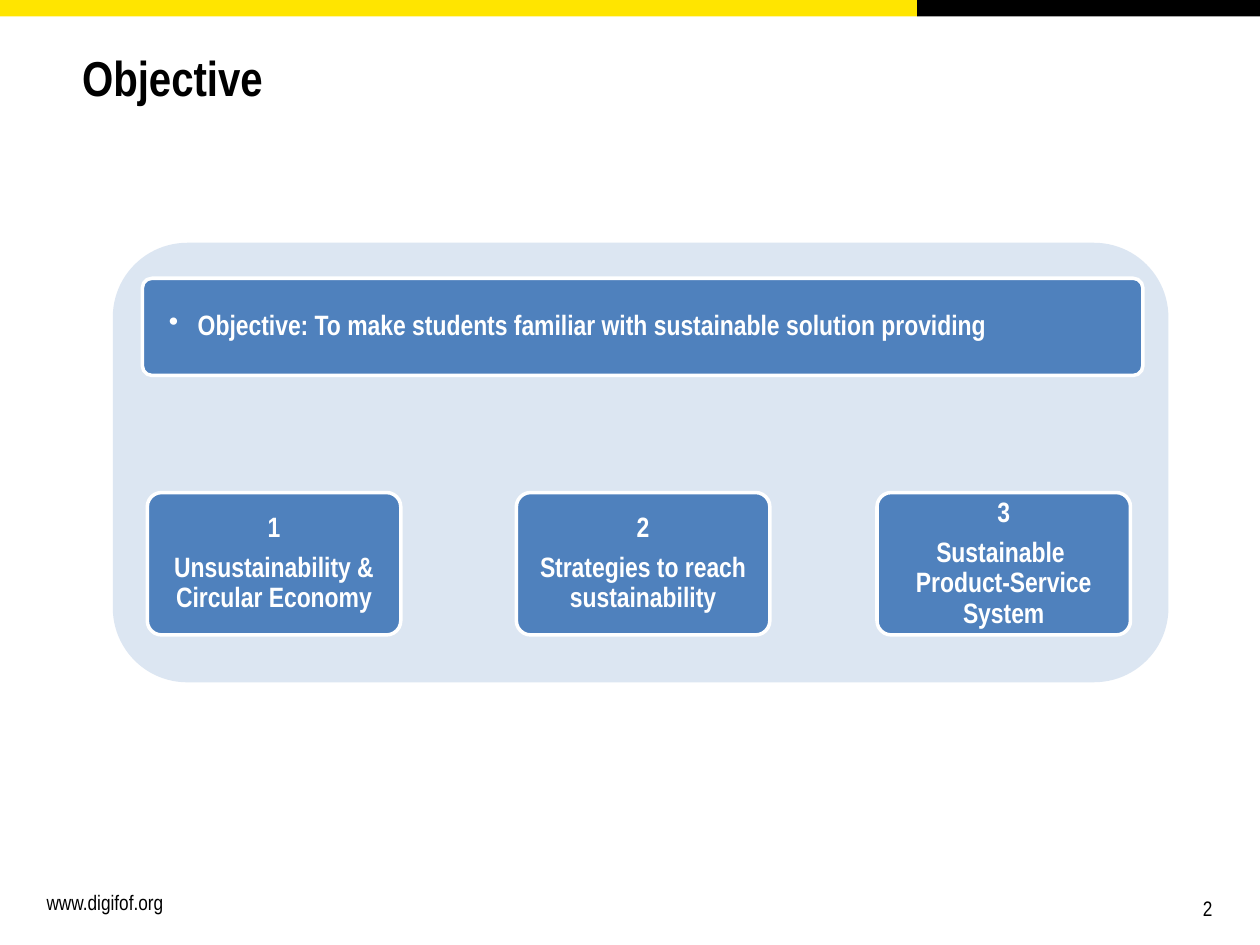
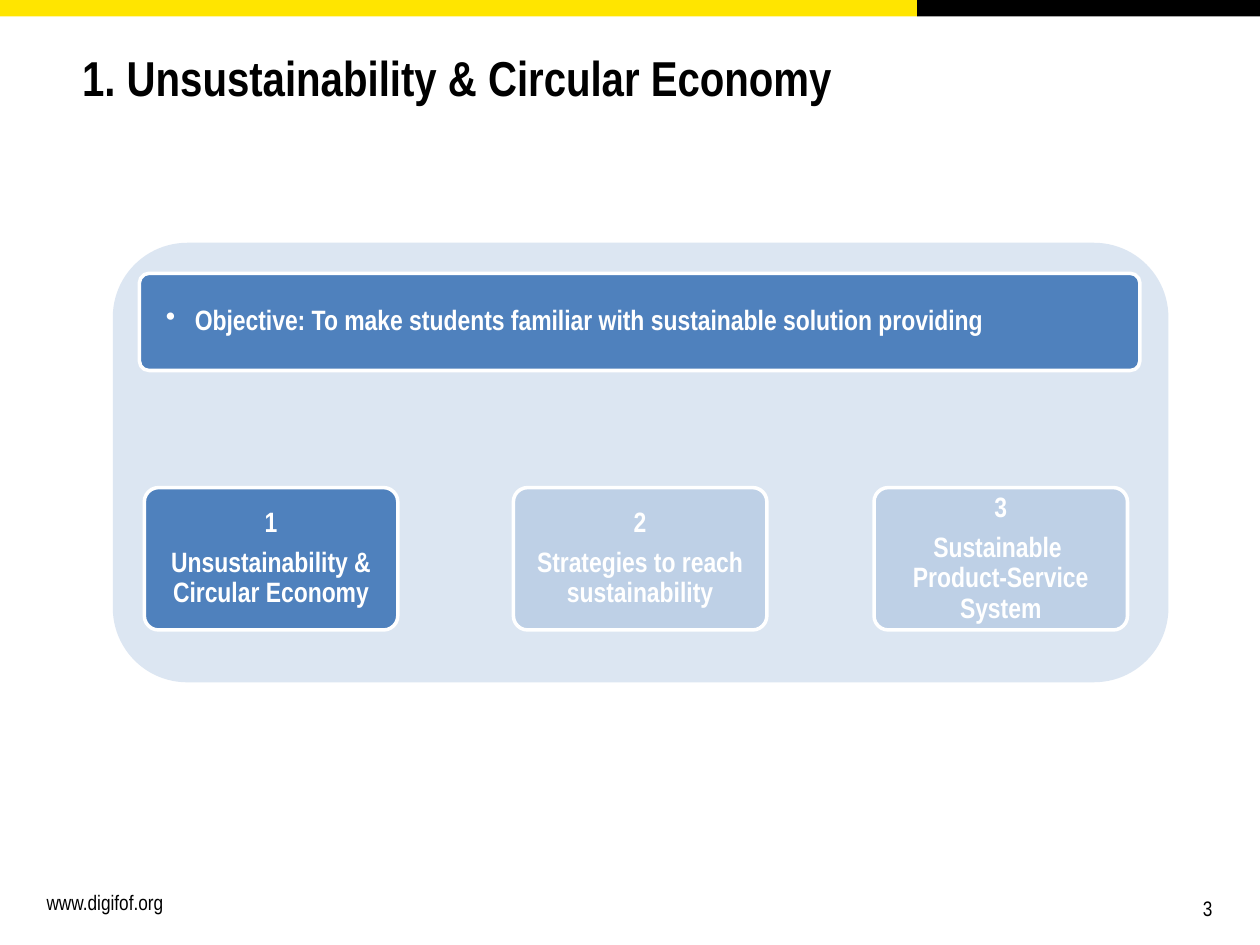
from dataclasses import dataclass
from lxml.etree import SubElement
from pptx import Presentation
from pptx.dml.color import RGBColor
from pptx.enum.shapes import MSO_SHAPE
from pptx.enum.text import MSO_ANCHOR, PP_ALIGN
from pptx.oxml.ns import qn
from pptx.util import Cm, Pt

RECT, ROUND = MSO_SHAPE.RECTANGLE, MSO_SHAPE.ROUNDED_RECTANGLE
LEFT, MID, RIGHT = PP_ALIGN.LEFT, PP_ALIGN.CENTER, PP_ALIGN.RIGHT
TOP, CENTER, BOTTOM = MSO_ANCHOR.TOP, MSO_ANCHOR.MIDDLE, MSO_ANCHOR.BOTTOM
TITLE_ONLY = 5


@dataclass(frozen=True)
class Theme:
    font: str = "Arial Narrow"
    black: str = "000000"
    white: str = "FFFFFF"
    yellow: str = "FFE500"
    blue: str = "4F81BD"
    pale: str = "DCE6F2"
    title: int = 28
    body: int = 16
    small: int = 12
    edge: int = 2


class Deck:
    def __init__(self, theme):
        self.theme = theme
        self.prs = Presentation()
        self.prs.slide_width, self.prs.slide_height = Cm(25.4), Cm(19.05)
        self.slide = None

    def start(self, title, number):
        """Add a slide with its title, bands and footer."""
        t = self.theme
        self.slide = self.prs.slides.add_slide(self.prs.slide_layouts[TITLE_ONLY])
        self.shape(RECT, (0, 0, 18.49, 0.33), t.yellow)
        self.shape(RECT, (18.49, 0, 6.91, 0.33), t.black)
        head = self.slide.shapes.title
        head.left, head.top, head.width, head.height = map(Cm, (1.4, 0.84, 17.5, 1.52))
        self.letter(head, [title], t.title, t.black, True, LEFT, TOP)
        self.label("www.digifof.org", (0.69, 17.81, 7.42, 0.77), LEFT, TOP)
        self.label(str(number), (17.5, 17.27, 7.19, 1.42), RIGHT, BOTTOM)

    def shape(self, kind, box, fill, edge=None, curve=None):
        item = self.slide.shapes.add_shape(kind, *map(Cm, box))
        item.shadow.inherit = False
        item.fill.solid()
        item.fill.fore_color.rgb = RGBColor.from_string(fill)
        if edge:
            item.line.color.rgb = RGBColor.from_string(edge)
            item.line.width = Pt(self.theme.edge)
        else:
            item.line.fill.background()
        if curve:
            item.adjustments[0] = curve
        return item

    def letter(self, item, lines, size, color, bold, align, anchor):
        """Fill an item with styled paragraphs."""
        frame = item.text_frame
        frame.word_wrap = True
        frame.vertical_anchor = anchor
        frame.text = lines[0]
        for line in lines[1:]:
            frame.add_paragraph().text = line
        for para in frame.paragraphs:
            para.alignment = align
            for run in para.runs:
                font = run.font
                font.name, font.size, font.bold = self.theme.font, Pt(size), bold
                font.color.rgb = RGBColor.from_string(color)
            for gap in para._p.findall(qn("a:br")):
                SubElement(gap, qn("a:rPr"), sz=str(size * 100))

    def label(self, text, box, align, anchor):
        item = self.slide.shapes.add_textbox(*map(Cm, box))
        self.letter(item, [text], self.theme.small, self.theme.black, False, align, anchor)

    def card(self, box, lines, align=MID, pad=0.2):
        t = self.theme
        item = self.shape(ROUND, box, t.blue, t.white, 0.1)
        self.letter(item, lines, t.body, t.white, True, align, CENTER)
        frame = item.text_frame
        frame.margin_left = frame.margin_right = Cm(pad)
        frame.margin_top = frame.margin_bottom = Cm(0.15)
        for para in frame.paragraphs:
            para.line_spacing = 0.9
            para.space_after = Pt(0.35 * t.body)
        return item

    def bar(self, box, text):
        """Draw a wide card with one bulleted line."""
        item = self.card(box, [text], LEFT, 0.48)
        props = item.text_frame.paragraphs[0]._p.get_or_add_pPr()
        props.set("marL", str(Cm(0.58)))
        props.set("indent", str(-Cm(0.58)))
        SubElement(props, qn("a:buChar"), char="•")

    def veil(self, box):
        """Fade what lies below with a translucent white shape."""
        item = self.shape(ROUND, box, self.theme.white, curve=0.07)
        tint = item._element.spPr.find(qn("a:solidFill"))[0]
        SubElement(tint, qn("a:alpha"), val="63000")


TOPICS = (
    "Unsustainability & Circular Economy",
    "Strategies to reach sustainability",
    "Sustainable \nProduct-Service System",
)
LEFTS = (2.97, 10.41, 17.68)
GOAL = "Objective: To make students familiar with sustainable solution providing"


def agenda(deck, dx=0, dy=0, faded=()):
    """Draw the goal and topics, moved by dx and dy, with some topics faded."""
    pale = deck.theme.pale
    deck.shape(ROUND, (2.31, 4.93, 21.21, 8.79), pale, pale)
    boxes = [(left + dx, 9.93 + dy, 5.11, 2.87) for left in LEFTS]
    for rank, (box, topic) in enumerate(zip(boxes, TOPICS), 1):
        deck.card(box, [str(rank), topic])
    deck.bar((2.87 + dx, 5.61 + dy, 20.17, 1.96), GOAL)
    for rank in faded:
        deck.veil(boxes[rank - 1])


def main():
    deck = Deck(Theme())
    deck.start("Objective", 2)
    agenda(deck)
    deck.start(f"1. {TOPICS[0]}", 3)
    agenda(deck, -0.06, -0.1, faded=(3, 2))
    deck.prs.save("out.pptx")


if __name__ == "__main__":
    main()
